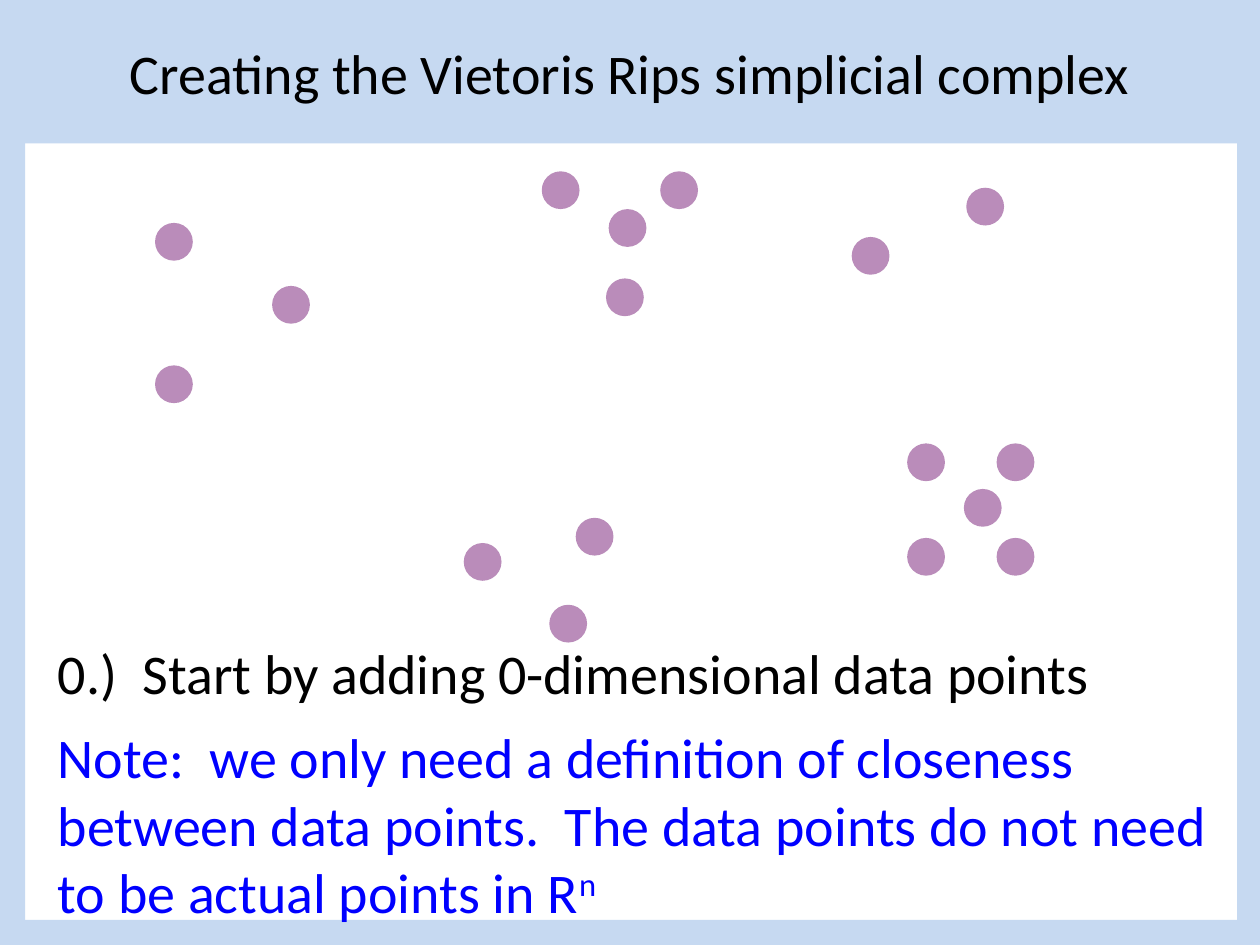
from lxml import etree
from pptx import Presentation
from pptx.dml.color import RGBColor
from pptx.enum.shapes import MSO_SHAPE
from pptx.enum.text import MSO_ANCHOR, MSO_AUTO_SIZE, PP_ALIGN
from pptx.oxml.ns import qn
from pptx.util import Pt

RECT, OVAL = MSO_SHAPE.RECTANGLE, MSO_SHAPE.OVAL
TITLE_ONLY = 5

TITLE = "Creating the Vietoris Rips simplicial complex"
STEP = "0.)  Start by adding 0-dimensional data points"
NOTE = ("Note:  we only need a definition of closeness between data points.  "
        "The data points do not need to be actual points in R")
EXPONENT = "n"

# Left and top of each data point, by cluster
CLUSTERS = {
    "left": [(88.6, 208.8), (155.5, 163.4), (88.6, 127.4)],
    "top": [(309.6, 97.9), (377.3, 97.9), (347.8, 119.5), (346.3, 159.1)],
    "upper right": [(486.7, 135.4), (552.2, 107.3)],
    "bottom": [(265, 310.3), (329, 295.9), (313.9, 345.6)],
    "lower right": [(569.5, 253.4), (518.4, 253.4), (518.4, 307.4),
                    (550.8, 279.4), (569.5, 307.4)],
}

COLORS = {"frame": "C6D9F1", "point": "660066", "text": "000000", "note": "0000FF"}
FONT, SIZE = "Calibri", 32
WIDTH, HEIGHT = 720, 540
BORDER, TITLE_HEIGHT = 14.4, 82
DOT, DOT_OPACITY = 21.6, 45


def color(name):
    return RGBColor.from_string(COLORS[name])


def add_filled(slide, kind, box, fill):
    s = slide.shapes.add_shape(kind, *map(Pt, box))
    s.shadow.inherit = False
    s.fill.solid()
    s.fill.fore_color.rgb = color(fill)
    s.line.fill.background()
    return s


def set_opacity(s, percent):
    rgb = s.fill._xPr.find(qn("a:solidFill"))[0]
    etree.SubElement(rgb, qn("a:alpha")).set("val", str(percent * 1000))


def style(p, text, name):
    p.text = text
    p.font.name, p.font.size = FONT, Pt(SIZE)
    p.font.color.rgb = color(name)


def add_title(slide):
    s = slide.shapes.title
    s.left, s.top, s.width, s.height = map(Pt, (0, 0, WIDTH, TITLE_HEIGHT))
    s.fill.solid()
    s.fill.fore_color.rgb = color("frame")
    tf = s.text_frame
    tf.auto_size = MSO_AUTO_SIZE.NONE
    tf.vertical_anchor = MSO_ANCHOR.MIDDLE
    style(tf.paragraphs[0], TITLE, "text")
    tf.paragraphs[0].alignment = PP_ALIGN.CENTER


def add_frame(slide):
    for box in [(0, 0, BORDER, HEIGHT), (WIDTH - 13, 0, 13, HEIGHT),
                (0, 0, WIDTH, BORDER), (0, HEIGHT - BORDER, WIDTH, BORDER)]:
        add_filled(slide, RECT, box, "frame")


def add_explanation(slide):
    tf = slide.shapes.add_textbox(Pt(25.9), Pt(361.4), Pt(694), Pt(172)).text_frame
    tf.word_wrap = True
    style(tf.paragraphs[0], STEP, "text")
    p = tf.add_paragraph()
    style(p, NOTE, "note")
    p.space_before = Pt(9.75)
    r = p.add_run()
    r.text = EXPONENT
    r.font._element.set("baseline", "30000")


def main():
    prs = Presentation()
    prs.slide_width, prs.slide_height = Pt(WIDTH), Pt(HEIGHT)
    slide = prs.slides.add_slide(prs.slide_layouts[TITLE_ONLY])
    add_title(slide)
    add_frame(slide)
    add_explanation(slide)
    for points in CLUSTERS.values():
        for x, y in points:
            s = add_filled(slide, OVAL, (x, y, DOT, DOT), "point")
            set_opacity(s, DOT_OPACITY)
    prs.save("out.pptx")


if __name__ == "__main__":
    main()
